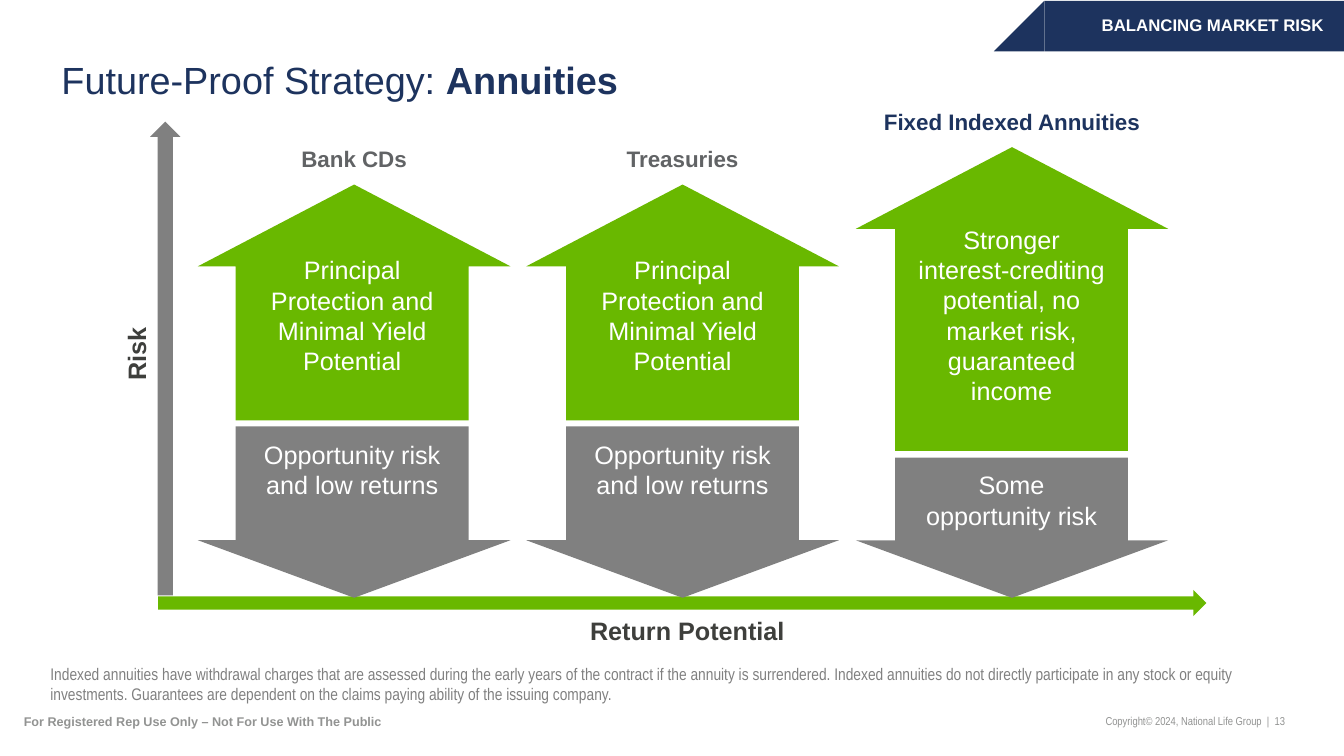
from dataclasses import dataclass

from pptx import Presentation
from pptx.dml.color import RGBColor
from pptx.enum.shapes import MSO_SHAPE
from pptx.enum.text import MSO_ANCHOR, MSO_AUTO_SIZE, PP_ALIGN
from pptx.util import Pt

NAVY = RGBColor(0x1D, 0x33, 0x5E)
GREEN = RGBColor(0x69, 0xB8, 0x00)
GRAY = RGBColor(0x80, 0x80, 0x80)
LABEL_GRAY = RGBColor(0x61, 0x63, 0x65)
AXIS_GRAY = RGBColor(0x3E, 0x3F, 0x3C)
FOOTER_GRAY = RGBColor(0x92, 0x93, 0x92)
WHITE = RGBColor(0xFF, 0xFF, 0xFF)

ARROW_WIDTH = 223.2
BODY_WIDTH = 166.3
HEAD_HEIGHT = 58.4
DOWN_SHOULDER = 385.9
DOWN_TIP = 427
DEFAULT_INSETS = (7.2, 3.6, 7.2, 3.6)
BODY_INSETS = (14.4, 7.2, 14.4, 14.4)


@dataclass
class Strategy:
    """One column of the comparison, with lengths in points."""
    name: str
    color: RGBColor
    left: float
    body_left: float
    up_tip: float
    up_base: float
    down_base: float
    benefit: str
    benefit_box: tuple
    drawback: str
    drawback_box: tuple


SAFE_BENEFIT = "Principal Protection and Minimal Yield Potential"
SAFE_DRAWBACK = "Opportunity risk and low returns"
SAFE_LEVELS = (131.8, 300.2, 304.6, SAFE_BENEFIT, (175, 107.3),
               SAFE_DRAWBACK, (304.6, 68.4))
STRATEGIES = [
    Strategy("Bank CDs", LABEL_GRAY, 141.4, 168.4, *SAFE_LEVELS),
    Strategy("Treasuries", LABEL_GRAY, 376, 404.4, *SAFE_LEVELS),
    Strategy("Fixed Indexed Annuities", NAVY, 611.3, 639.4, 105.1, 322, 326.8,
             "Stronger interest-crediting potential, no market risk, "
             "guaranteed income", (149, 159.1),
             "Some opportunity risk", (332.6, 56.2)),
]


def paint(shape, color):
    """Give a shape a flat fill without line or shadow."""
    shape.shadow.inherit = False
    shape.fill.solid()
    shape.fill.fore_color.rgb = color
    shape.line.fill.background()


def add_run(paragraph, text, size, color, bold=False, font="Arial"):
    """Append one formatted run."""
    run = paragraph.add_run()
    run.text = text
    run.font.name = font
    run.font.size = Pt(size)
    run.font.bold = bold
    run.font.color.rgb = color


def format_frame(frame, insets, anchor, wrap=True):
    """Set the insets, anchor and wrapping of a text frame."""
    frame.auto_size = MSO_AUTO_SIZE.NONE
    frame.word_wrap = wrap
    frame.vertical_anchor = anchor
    (frame.margin_left, frame.margin_top,
     frame.margin_right, frame.margin_bottom) = map(Pt, insets)


def add_text(slide, box, text, size, color, bold=False, font="Arial",
             align=PP_ALIGN.CENTER, anchor=MSO_ANCHOR.TOP,
             insets=DEFAULT_INSETS, wrap=True, rotation=0):
    """Add a text box holding one paragraph."""
    shape = slide.shapes.add_textbox(*map(Pt, box))
    shape.rotation = rotation
    format_frame(shape.text_frame, insets, anchor, wrap)
    paragraph = shape.text_frame.paragraphs[0]
    paragraph.alignment = align
    add_run(paragraph, text, size, color, bold, font)


def add_preset(slide, kind, box, color, rotation=0):
    """Add a flat preset shape."""
    shape = slide.shapes.add_shape(kind, *map(Pt, box))
    shape.rotation = rotation
    paint(shape, color)


def add_block_arrow(slide, strategy, base, shoulder, tip, color):
    """Draw a vertical block arrow from its base to its tip."""
    left, body_left = strategy.left, strategy.body_left
    right, body_right = left + ARROW_WIDTH, body_left + BODY_WIDTH
    points = [(body_left, base), (body_right, base), (body_right, shoulder),
              (right, shoulder), (left + ARROW_WIDTH / 2, tip),
              (left, shoulder), (body_left, shoulder)]
    corners = [(Pt(x), Pt(y)) for x, y in points]
    builder = slide.shapes.build_freeform(*corners[0])
    builder.add_line_segments(corners[1:], close=True)
    paint(builder.convert_to_shape(), color)


def add_strategy(slide, strategy):
    """Draw one column: label, benefit arrow and drawback arrow."""
    add_block_arrow(slide, strategy, strategy.down_base, DOWN_SHOULDER,
                    DOWN_TIP, GRAY)
    add_block_arrow(slide, strategy, strategy.up_base,
                    strategy.up_tip + HEAD_HEIGHT, strategy.up_tip, GREEN)
    for text, (top, height) in ((strategy.benefit, strategy.benefit_box),
                                (strategy.drawback, strategy.drawback_box)):
        add_text(slide, (strategy.body_left, top, BODY_WIDTH, height), text,
                 18, WHITE, anchor=MSO_ANCHOR.MIDDLE, insets=BODY_INSETS)
    add_text(slide, (strategy.left, strategy.up_tip - 31.7, ARROW_WIDTH, 26.6),
             strategy.name, 16, strategy.color, bold=True)


def add_title(slide):
    """Place and fill the title placeholder."""
    title = slide.shapes.title
    title.left, title.top, title.width, title.height = map(
        Pt, (7.9, 29.5, 960, 58.3))
    format_frame(title.text_frame, (36, 14.4, 36, 14.4), MSO_ANCHOR.MIDDLE)
    paragraph = title.text_frame.paragraphs[0]
    paragraph.alignment = PP_ALIGN.LEFT
    paragraph.line_spacing = 0.9
    add_run(paragraph, "Future-Proof Strategy: ", 27, NAVY)
    add_run(paragraph, "Annuities", 27, NAVY, bold=True)


def add_axes(slide):
    """Draw the two axis arrows and their names."""
    add_preset(slide, MSO_SHAPE.RIGHT_ARROW, (113, 421.4, 748.8, 18.7), GREEN)
    add_preset(slide, MSO_SHAPE.RIGHT_ARROW, (-51.1, 245.3, 338.4, 21.6),
               GRAY, rotation=270)
    add_text(slide, (134.6, 436.3, 712.8, 28.8), "Return Potential", 18,
             AXIS_GRAY, bold=True)
    add_text(slide, (56.9, 238.3, 80.6, 28.8), "Risk", 18, AXIS_GRAY,
             bold=True, rotation=270)


def add_banner(slide):
    """Draw the section banner in the top right corner."""
    add_preset(slide, MSO_SHAPE.RECTANGLE, (745.9, 0.7, 214.1, 36), NAVY)
    add_preset(slide, MSO_SHAPE.RIGHT_TRIANGLE, (709.9, 0.7, 36, 36), NAVY,
               rotation=270)
    add_text(slide, (745.9, 10.8, 214.1, 14.4), "BALANCING MARKET RISK", 12,
             WHITE, bold=True, align=PP_ALIGN.RIGHT,
             anchor=MSO_ANCHOR.MIDDLE, insets=(0, 0, 14.4, 0))


def add_footer(slide):
    """Add the disclaimer and the two footer lines."""
    add_text(slide, (0, 473.8, 960, 28.8),
             "Indexed annuities have withdrawal charges that are assessed "
             "during the early years of the contract if the annuity is "
             "surrendered. Indexed annuities do not directly participate in "
             "any stock or equity investments. Guarantees are dependent on "
             "the claims paying ability of the issuing company.",
             12, GRAY, font="Arial Narrow", align=PP_ALIGN.LEFT,
             anchor=MSO_ANCHOR.BOTTOM, insets=(36, 0, 36, 0))
    add_text(slide, (15.8, 509.8, 257.8, 10.8),
             "For Registered Rep Use Only – Not For Use With The Public", 9,
             FOOTER_GRAY, bold=True, anchor=MSO_ANCHOR.MIDDLE,
             insets=(0, 0, 0, 0), wrap=False)
    add_text(slide, (787, 509.8, 131, 10.1),
             "Copyright© 2024, National Life Group  |  13", 8.2, FOOTER_GRAY,
             font="Arial Narrow", align=PP_ALIGN.RIGHT,
             anchor=MSO_ANCHOR.MIDDLE, insets=(0, 0, 0, 0), wrap=False)


def main():
    """Build the slide and save it."""
    presentation = Presentation()
    presentation.slide_width = Pt(960)
    presentation.slide_height = Pt(540)
    slide = presentation.slides.add_slide(presentation.slide_layouts[5])
    add_title(slide)
    add_axes(slide)
    for strategy in STRATEGIES:
        add_strategy(slide, strategy)
    add_banner(slide)
    add_footer(slide)
    presentation.save("out.pptx")


if __name__ == "__main__":
    main()
